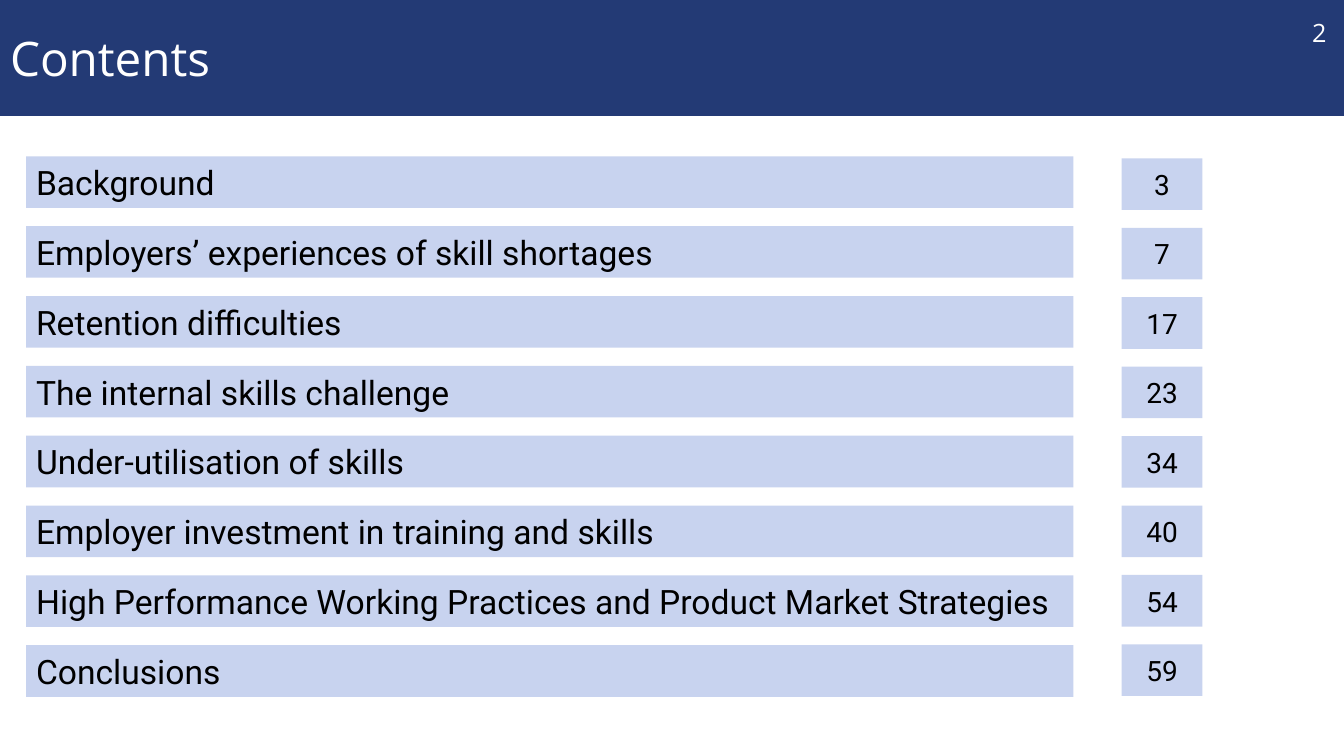
"""Build the contents slide with its section bars and page numbers."""
from pptx import Presentation
from pptx.dml.color import RGBColor
from pptx.enum import shapes, text
from pptx.util import Cm, Pt

TITLE = "Contents"
NUMBER = "2"
ITEMS = [
    ("Background", "3"),
    ("Employers’ experiences of skill shortages", "7"),
    ("Retention difficulties", "17"),
    ("The internal skills challenge", "23"),
    ("Under-utilisation of skills", "34"),
    ("Employer investment in training and skills", "40"),
    ("High Performance Working Practices and Product Market Strategies", "54"),
    ("Conclusions", "59"),
]
NAVY, PALE, WHITE, BLACK = "233A75", "C8D3EF", "FFFFFF", "000000"
LEFT, CENTER = text.PP_ALIGN.LEFT, text.PP_ALIGN.CENTER
WIDE, HIGH = 33.87, 19.05
BAR = 1.3
# left, width, first top, step, size, alignment
COLUMNS = [
    (0.66, 26.39, 3.94, 1.76, 24, LEFT),
    (28.27, 2.03, 3.99, 1.75, 20, CENTER),
]


def paint(fill, color):
    fill.solid()
    fill.fore_color.rgb = RGBColor.from_string(color)


def write(shape, words, size, font, color, align=LEFT, wrap=True):
    frame = shape.text_frame
    frame.word_wrap = wrap
    frame.auto_size = text.MSO_AUTO_SIZE.NONE
    frame.vertical_anchor = text.MSO_ANCHOR.MIDDLE
    para = frame.paragraphs[0]
    para.alignment = align
    run = para.add_run()
    run.text = words
    run.font.size = Pt(size)
    run.font.name = font
    paint(run.font.fill, color)


def add_bar(slide, box, words, size, align):
    bar = slide.shapes.add_shape(shapes.MSO_SHAPE.RECTANGLE, *map(Cm, box))
    bar.shadow.inherit = False
    paint(bar.fill, PALE)
    bar.line.fill.background()
    write(bar, words, size, "Roboto", BLACK, align)


def main():
    deck = Presentation()
    deck.slide_width, deck.slide_height = Cm(WIDE), Cm(HIGH)
    slide = deck.slides.add_slide(deck.slide_layouts[5])

    title = slide.shapes.title
    title.left, title.top = Cm(0), Cm(0)
    title.width, title.height = Cm(WIDE), Cm(2.92)
    paint(title.fill, NAVY)
    write(title, TITLE, 34, "Open Sans", WHITE)

    for col, (left, width, top, step, size, align) in enumerate(COLUMNS):
        for row, item in enumerate(ITEMS):
            box = left, top + row * step, width, BAR
            add_bar(slide, box, item[col], size, align)

    number = slide.shapes.add_textbox(Cm(32.82), Cm(0.3), Cm(0.86), Cm(1.02))
    write(number, NUMBER, 18, "Open Sans", WHITE, wrap=False)
    deck.save("out.pptx")


if __name__ == "__main__":
    main()
